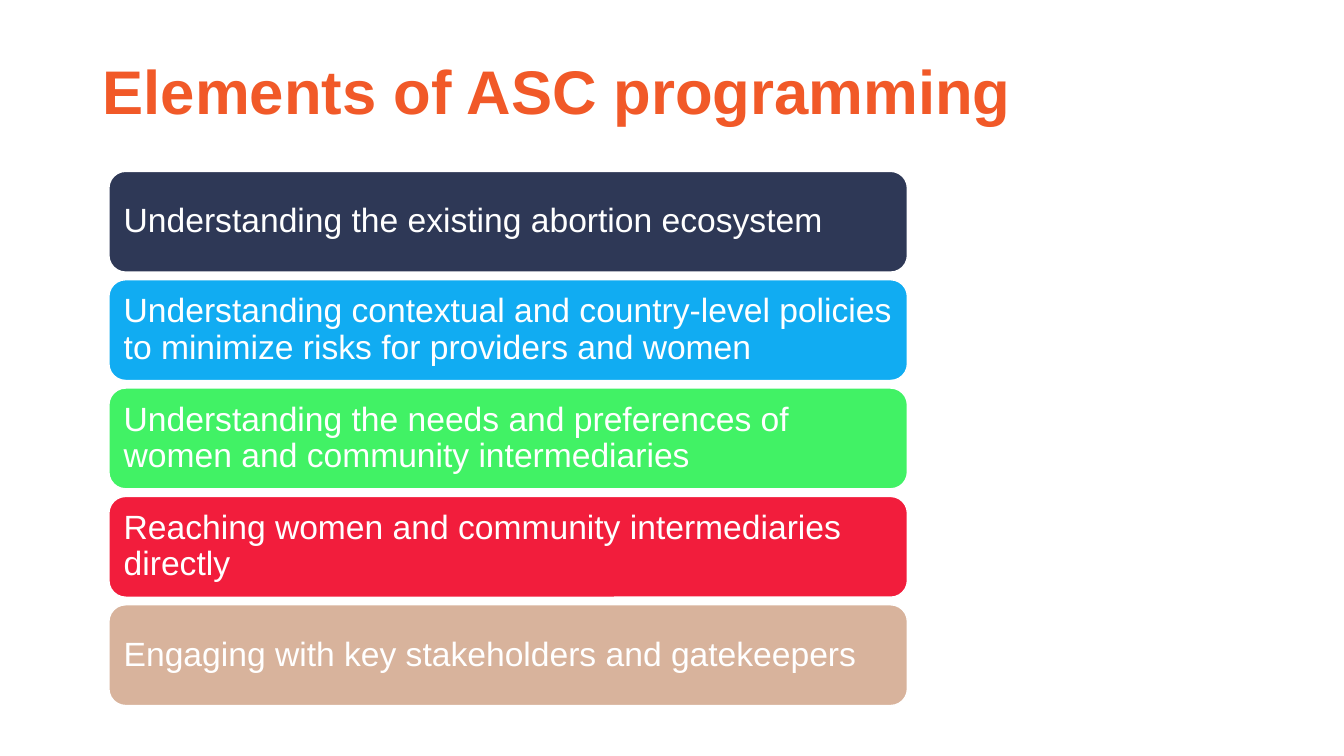
import pptx
import pptx.util
import pptx.dml.color
import pptx.enum.shapes
import pptx.enum.text

WIDE, HIGH = 13.33, 7.5
LEFT, TOP, STEP = 1.08, 1.7, 1.075
BAR_W, BAR_H = 7.92, 1
BARS = [
    ("Understanding the existing abortion ecosystem", "2E3856"),
    ("Understanding contextual and country-level policies to minimize risks "
     "for providers and women", "11ACF2"),
    ("Understanding the needs and preferences of women and community "
     "intermediaries", "41F265"),
    ("Reaching women and community intermediaries directly", "F21D3C"),
    ("Engaging with key stakeholders and gatekeepers", "D8B39C"),
]


def inch(num):
    """Turn a number of inches into a length."""
    return pptx.util.Inches(num)


def paint(item, code):
    """Give a fill, line or font a solid colour from a hex string."""
    if hasattr(item, "solid"):
        item.solid()
        item = item.fore_color
    else:
        item = item.color
    item.rgb = pptx.dml.color.RGBColor.from_string(code)


def write(shape, text, size, code, bold=False):
    """Set left-aligned text, centred vertically in its shape."""
    frame = shape.text_frame
    frame.text = text
    frame.word_wrap = True
    frame.auto_size = pptx.enum.text.MSO_AUTO_SIZE.NONE
    frame.vertical_anchor = pptx.enum.text.MSO_ANCHOR.MIDDLE
    para = frame.paragraphs[0]
    para.alignment = pptx.enum.text.PP_ALIGN.LEFT
    para.line_spacing = 0.9
    font = para.runs[0].font
    font.name = "Arial"
    font.size = pptx.util.Pt(size)
    font.bold = bold
    paint(font, code)


def head(slide, text):
    """Place and format the slide title."""
    title = slide.shapes.title
    title.left, title.top = inch(0.92), inch(0.21)
    title.width, title.height = inch(10.34), inch(1.45)
    write(title, text, 44, "F15928", True)


def bar(slide, row, text, code):
    """Draw one rounded bar of the list on its row."""
    shape = slide.shapes.add_shape(
        pptx.enum.shapes.MSO_SHAPE.ROUNDED_RECTANGLE,
        inch(LEFT), inch(TOP + row * STEP), inch(BAR_W), inch(BAR_H))
    shape.shadow.inherit = False
    paint(shape.fill, code)
    paint(shape.line, "FFFFFF")
    shape.line.width = pptx.util.Pt(1)
    frame = shape.text_frame
    frame.margin_left = frame.margin_right = inch(0.1)
    frame.margin_top = frame.margin_bottom = inch(0.1)
    write(shape, text, 24, "FFFFFF")


def main():
    """Build and save the slide."""
    deck = pptx.Presentation()
    deck.slide_width, deck.slide_height = inch(WIDE), inch(HIGH)
    slide = deck.slides.add_slide(deck.slide_layouts[5])
    head(slide, "Elements of ASC programming")
    for row, (text, code) in enumerate(BARS):
        bar(slide, row, text, code)
    deck.save("out.pptx")


if __name__ == "__main__":
    main()
